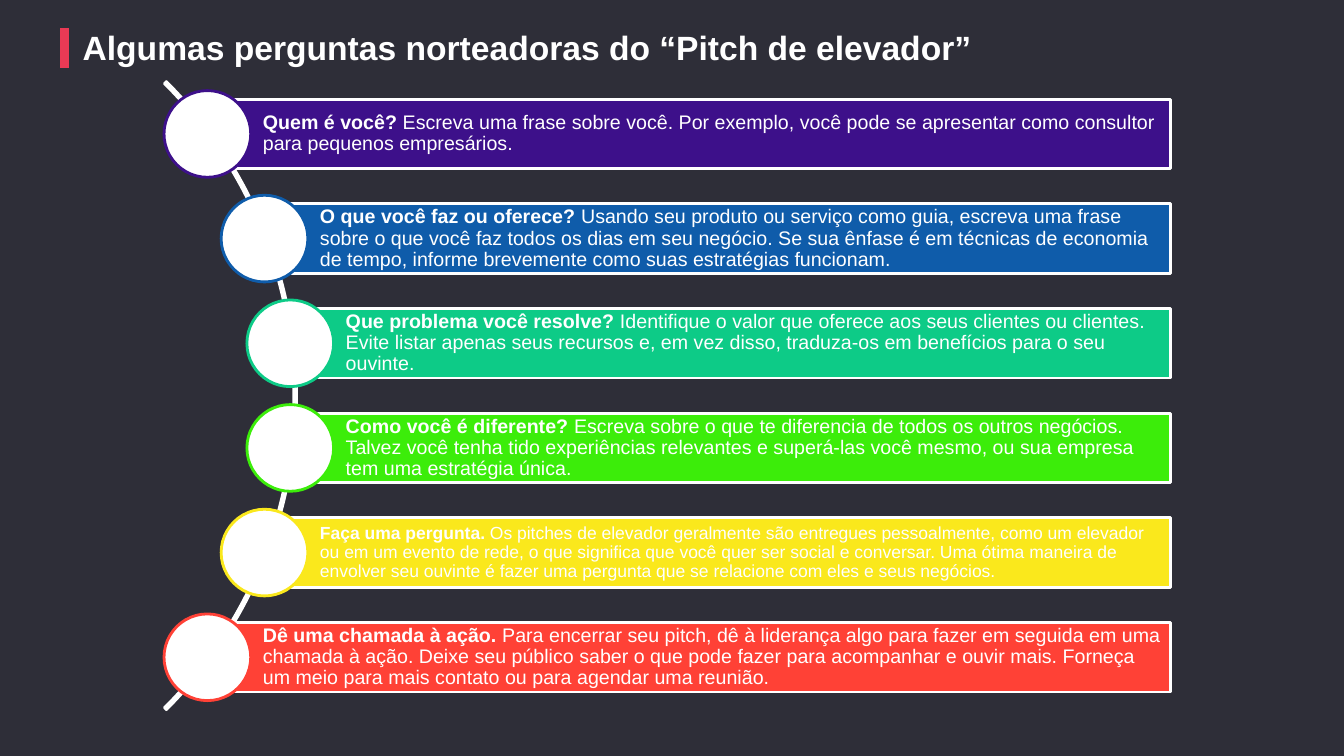
from math import sqrt
from lxml.etree import SubElement
from pptx import Presentation
from pptx.dml.color import RGBColor
from pptx.enum.shapes import MSO_CONNECTOR, MSO_SHAPE
from pptx.enum.text import MSO_ANCHOR, PP_ALIGN
from pptx.oxml.ns import qn
from pptx.util import Inches, Pt

WHITE = "FFFFFF"
STEPS = [
    ("3D108A", 14, "Quem é você? ",
     "Escreva uma frase sobre você. Por exemplo, você pode se apresentar como "
     "consultor para pequenos empresários."),
    ("0F5CAA", 14, "O que você faz ou oferece? ",
     "Usando seu produto ou serviço como guia, escreva uma frase sobre o que você "
     "faz todos os dias em seu negócio. Se sua ênfase é em técnicas de economia de "
     "tempo, informe brevemente como suas estratégias funcionam."),
    ("0DCB87", 14, "Que problema você resolve? ",
     "Identifique o valor que oferece aos seus clientes ou clientes. Evite listar "
     "apenas seus recursos e, em vez disso, traduza-os em benefícios para o seu "
     "ouvinte."),
    ("3CED0A", 14, "Como você é diferente? ",
     "Escreva sobre o que te diferencia de todos os outros negócios. Talvez você "
     "tenha tido experiências relevantes e superá-las você mesmo, ou sua empresa "
     "tem uma estratégia única."),
    ("FAE81C", 12.5, "Faça uma pergunta. ",
     "Os pitches de elevador geralmente são entregues pessoalmente, como um "
     "elevador ou em um evento de rede, o que significa que você quer ser social e "
     "conversar. Uma ótima maneira de envolver seu ouvinte é fazer uma pergunta que "
     "se relacione com eles e seus negócios."),
    ("FF4136", 14, "Dê uma chamada à ação. ",
     "Para encerrar seu pitch, dê à liderança algo para fazer em seguida em uma "
     "chamada à ação. Deixe seu público saber o que pode fazer para acompanhar e "
     "ouvir mais. Forneça um meio para mais contato ou para agendar uma reunião."),
]


def paint(item, tone):
    """Set a solid fill, or a font or line colour, from a hex string."""
    if hasattr(item, "solid"):
        item.solid()
        item.fore_color.rgb = RGBColor.from_string(tone)
    else:
        item.color.rgb = RGBColor.from_string(tone)


def form(slide, kind, box, fill, edge):
    """Add a preset shape with a fill and a 2 pt edge."""
    shape = slide.shapes.add_shape(kind, *map(Inches, box))
    shape.shadow.inherit = False
    paint(shape.fill, fill)
    paint(shape.line, edge)
    shape.line.width = Pt(2)
    return shape


def write(shape, runs, size, pads, lead):
    """Write white left-aligned runs, each a text and a bold flag."""
    frame = shape.text_frame
    frame.word_wrap = True
    (frame.margin_left, frame.margin_top,
     frame.margin_right, frame.margin_bottom) = map(Inches, pads)
    para = frame.paragraphs[0]
    para.alignment = PP_ALIGN.LEFT
    para.line_spacing = lead
    for text, bold in runs:
        run = para.add_run()
        run.text = text
        run.font.name = "Arial"
        run.font.size = Pt(size)
        run.font.bold = bold
        paint(run.font, WHITE)
    return frame


def header(slide, left, top, width, height):
    """Place the red marker and the title in the given box."""
    ends = map(Inches, (left, top, left, top + height))
    mark = slide.shapes.add_connector(MSO_CONNECTOR.STRAIGHT, *ends)
    paint(mark.line, "EA3A55")
    mark.line.width = Pt(6)
    SubElement(mark._element.spPr, qn("a:effectLst"))
    box = map(Inches, (left + 0.18, top + 0.01, width - 0.18, height))
    title = slide.shapes.add_textbox(*box)
    write(title, [("Algumas perguntas norteadoras do “Pitch de elevador”", True)],
          24, (0, 0.04, 0, 0), 0.85)


def step(slide, left, mid, right, data):
    """Draw one bar and the disc centred on its left end."""
    tone, size, head, body = data
    tall, disc = 0.69, 0.86
    bar = form(slide, MSO_SHAPE.RECTANGLE,
               (left, mid - tall / 2, right - left, tall), tone, WHITE)
    frame = write(bar, [(head, True), (body, False)], size,
                  (0.55, 0.04, 0.04, 0.04), 0.9)
    frame.vertical_anchor = MSO_ANCHOR.MIDDLE
    form(slide, MSO_SHAPE.OVAL,
         (left - disc / 2, mid - disc / 2, disc, disc), WHITE, tone)


def curve(slide, left, top, right, height):
    """Draw the arc and hang the steps along it in equal rows."""
    arm = height / sqrt(2)
    hub = left - height / 2
    mid = top + height / 2
    arc = form(slide, MSO_SHAPE.BLOCK_ARC,
               (hub - arm, mid - arm, 2 * arm, 2 * arm), WHITE, WHITE)
    for i, turn in enumerate((189, 27, 0.003)):
        arc.adjustments[i] = turn
    row = height / len(STEPS)
    for i, data in enumerate(STEPS):
        rise = (i - (len(STEPS) - 1) / 2) * row
        reach = sqrt((arm - 0.03) ** 2 - rise ** 2)
        step(slide, hub + reach, mid + rise, right, data)


def main():
    """Build the slide and save it."""
    deck = Presentation()
    deck.slide_width, deck.slide_height = Inches(13.33), Inches(7.5)
    slide = deck.slides.add_slide(deck.slide_layouts[6])
    paint(slide.background.fill, "2E2E38")
    header(slide, 0.64, 0.28, 10.34, 0.39)
    curve(slide, 1.65, 0.81, 11.61, 6.23)
    deck.save("out.pptx")


if __name__ == "__main__":
    main()
